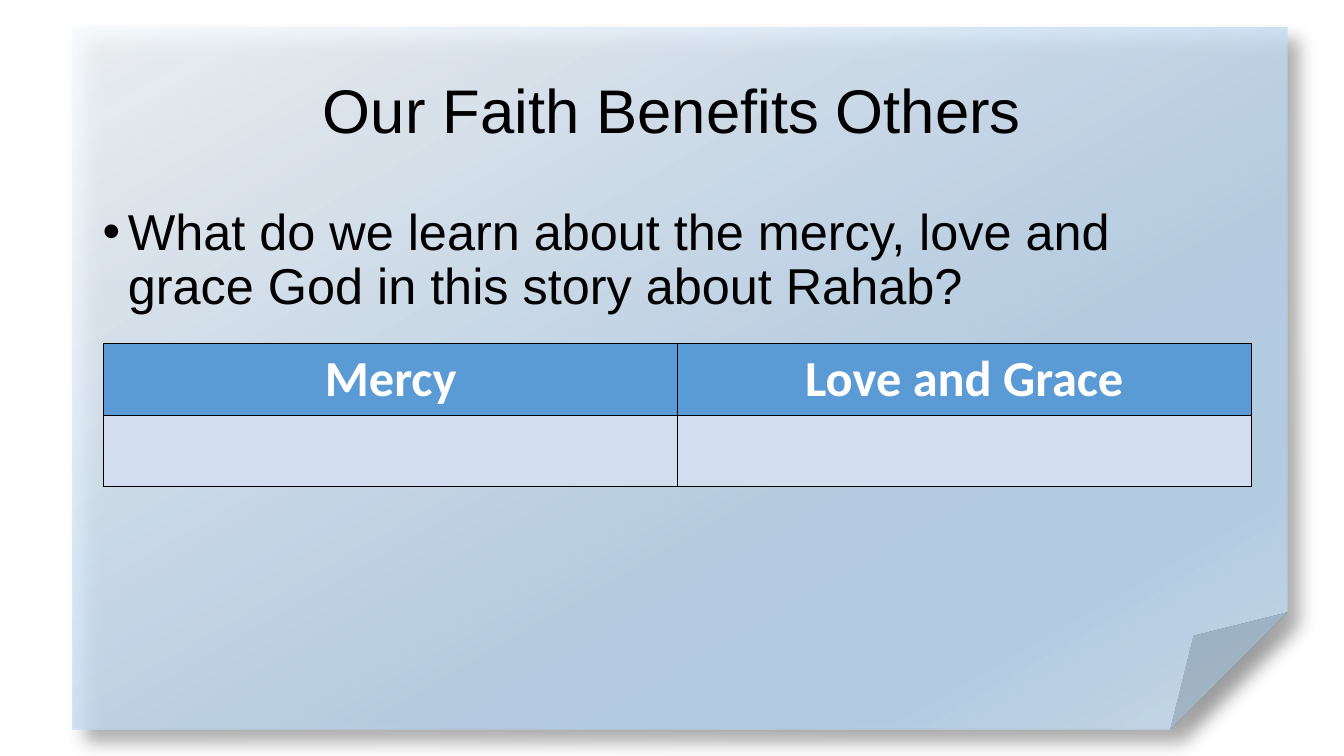
from lxml.etree import SubElement
from pptx import Presentation
from pptx.dml.color import RGBColor
from pptx.enum.shapes import MSO_SHAPE
from pptx.enum.text import MSO_ANCHOR, PP_ALIGN
from pptx.oxml import parse_xml
from pptx.oxml.ns import nsdecls, qn
from pptx.util import Inches, Pt

BLACK = RGBColor(0x00, 0x00, 0x00)
WHITE = RGBColor(0xFF, 0xFF, 0xFF)
HEADER_BLUE = RGBColor(0x5B, 0x9B, 0xD5)
BODY_BLUE = RGBColor(0xD2, 0xDE, 0xEF)
PAPER_LIGHT = RGBColor(0xF7, 0xFA, 0xFD)
PAPER_BLUE = RGBColor(0xB5, 0xD2, 0xEC)
PAPER_EDGE = RGBColor(0xCE, 0xE1, 0xF2)
PAPER_STOPS = [
    (0, PAPER_LIGHT, 84),
    (64, PAPER_BLUE, 80),
    (83, PAPER_BLUE, 84),
    (100, PAPER_EDGE, 84),
]


def color_xml(color, opacity):
    return f'<a:srgbClr val="{color}"><a:alpha val="{opacity * 1000}"/></a:srgbClr>'


def add_paper(slide):
    paper = slide.shapes.add_shape(
        MSO_SHAPE.FOLDED_CORNER, Inches(0.72), Inches(0.27), Inches(12.05), Inches(6.97)
    )
    paper.line.fill.background()
    paper.fill.background()
    paper.shadow.inherit = False
    properties = paper._element.spPr
    stops = "".join(
        f'<a:gs pos="{position * 1000}">{color_xml(color, opacity)}</a:gs>'
        for position, color, opacity in PAPER_STOPS
    )
    gradient = parse_xml(
        f'<a:gradFill {nsdecls("a")} rotWithShape="1"><a:gsLst>{stops}</a:gsLst>'
        f'<a:lin ang="{60 * 60000}" scaled="0"/></a:gradFill>'
    )
    properties.replace(properties.find(qn("a:noFill")), gradient)
    shadow = parse_xml(
        f'<a:outerShdw {nsdecls("a")} blurRad="{Pt(13)}" dist="{Pt(13)}" '
        f'dir="{45 * 60000}" algn="tl" rotWithShape="0">{color_xml(BLACK, 40)}</a:outerShdw>'
    )
    properties.find(qn("a:effectLst")).append(shadow)


def add_bullet(paragraph, indent):
    properties = paragraph._p.get_or_add_pPr()
    properties.set("marL", str(indent))
    properties.set("indent", str(-indent))
    SubElement(properties, qn("a:buFont")).set("typeface", "Arial")
    SubElement(properties, qn("a:buChar")).set("char", "•")


def write_text(frame, text, *, size, font="Arial", color=BLACK, bold=False,
               align=PP_ALIGN.LEFT, line_spacing=None, bullet_indent=None):
    frame.word_wrap = True
    paragraph = frame.paragraphs[0]
    paragraph.alignment = align
    paragraph.line_spacing = line_spacing
    if bullet_indent is not None:
        add_bullet(paragraph, bullet_indent)
    run = paragraph.add_run()
    run.text = text
    run.font.size = Pt(size)
    run.font.name = font
    run.font.bold = bold
    run.font.color.rgb = color


def add_text_box(slide, text, top, height, anchor=MSO_ANCHOR.TOP, **text_format):
    box = slide.shapes.add_textbox(Inches(0.92), Inches(top), Inches(11.5), Inches(height))
    box.text_frame.vertical_anchor = anchor
    write_text(box.text_frame, text, line_spacing=0.9, **text_format)


def style_cell(cell, fill_color):
    properties = cell._tc.get_or_add_tcPr()
    for side in ("lnL", "lnR", "lnT", "lnB"):
        properties.append(parse_xml(
            f'<a:{side} {nsdecls("a")} w="{Pt(1)}"><a:solidFill>'
            f'<a:srgbClr val="{BLACK}"/></a:solidFill></a:{side}>'
        ))
    cell.fill.solid()
    cell.fill.fore_color.rgb = fill_color


def add_answer_table(slide, headings):
    table = slide.shapes.add_table(
        2, len(headings), Inches(1.03), Inches(3.41), Inches(11.38), Inches(1.42)
    ).table
    for row, fill_color in zip(table.rows, (HEADER_BLUE, BODY_BLUE)):
        for cell in row.cells:
            style_cell(cell, fill_color)
    for cell, heading in zip(table.rows[0].cells, headings):
        write_text(cell.text_frame, heading, size=36, font="Calibri", color=WHITE,
                   bold=True, align=PP_ALIGN.CENTER)


def main():
    presentation = Presentation()
    presentation.slide_width = Inches(13.33)
    presentation.slide_height = Inches(7.5)
    slide = presentation.slides.add_slide(presentation.slide_layouts[6])
    add_paper(slide)
    add_text_box(slide, "Our Faith Benefits Others", 0.4, 1.45,
                 anchor=MSO_ANCHOR.MIDDLE, size=44, align=PP_ALIGN.CENTER)
    add_text_box(slide, "What do we learn about the mercy, love and grace God in this story about Rahab?",
                 2, 4.76, size=36, bullet_indent=Inches(0.25))
    add_answer_table(slide, ["Mercy", "Love and Grace"])
    presentation.save("out.pptx")


if __name__ == "__main__":
    main()
